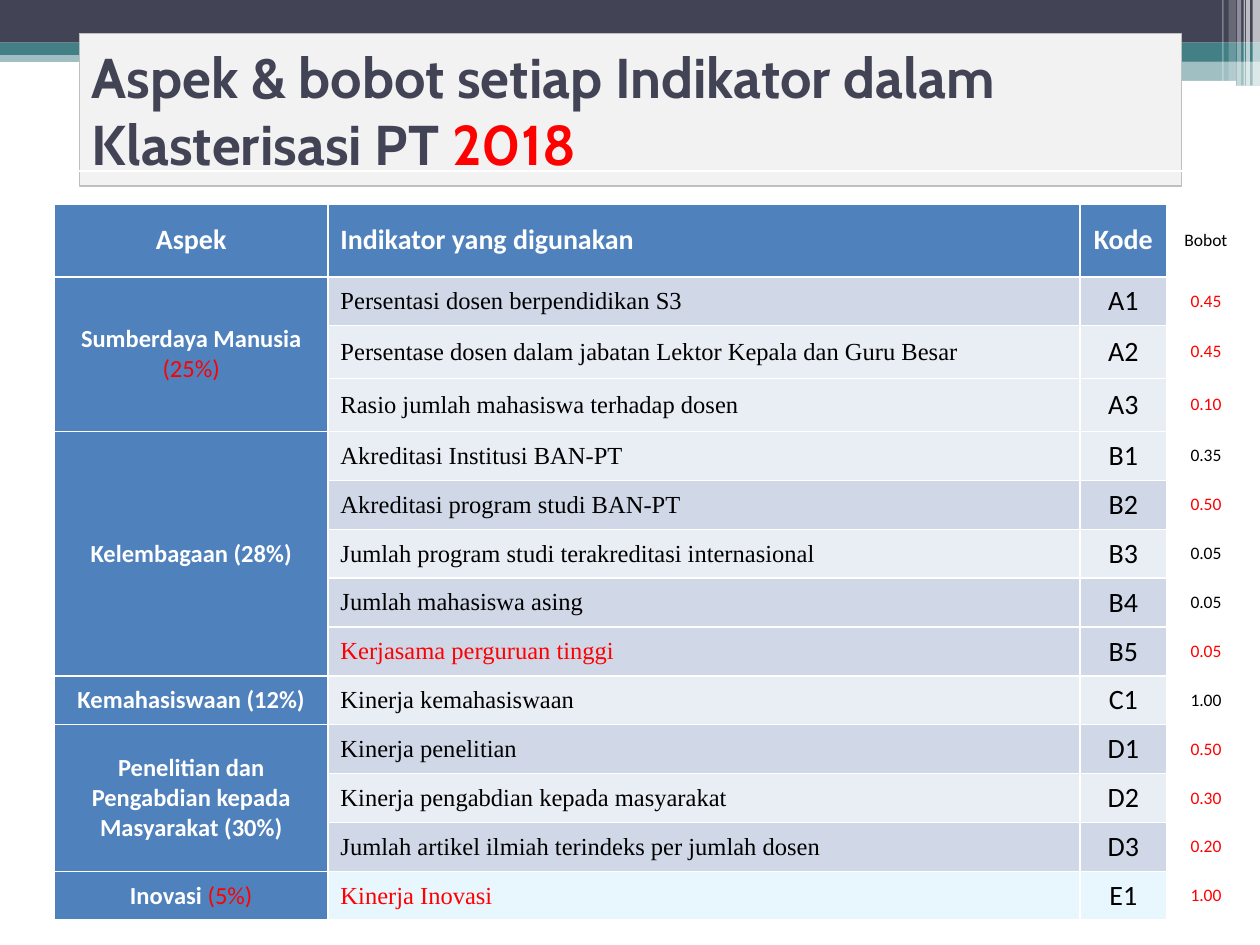
from lxml import etree
from pptx import Presentation
from pptx.dml.color import RGBColor
from pptx.enum.shapes import MSO_SHAPE
from pptx.enum.text import MSO_ANCHOR, PP_ALIGN
from pptx.oxml.ns import qn
from pptx.util import Cm, Pt

WHITE = RGBColor(0xFF, 0xFF, 0xFF)
BLACK = RGBColor(0, 0, 0)
RED = RGBColor(0xFF, 0, 0)
NAVY = RGBColor(0x42, 0x44, 0x56)
TEAL = RGBColor(0x43, 0x80, 0x86)
TITLE_FILL = RGBColor(0xF2, 0xF2, 0xF2)
TITLE_LINE = RGBColor(0xBF, 0xBF, 0xBF)
BLUE = RGBColor(0x4F, 0x81, 0xBD)
DARK_BAND = RGBColor(0xD0, 0xD8, 0xE8)
LIGHT_BAND = RGBColor(0xE9, 0xED, 0xF4)
PALE_BLUE = RGBColor(0xE8, 0xF6, 0xFE)


def add_runs(paragraph, runs, font_name, size):
    """Append runs given as (text, colour, bold)."""
    for text, color, bold in runs:
        span = paragraph.add_run()
        span.text = text
        span.font.name = font_name
        span.font.size = Pt(size)
        span.font.bold = bold
        span.font.color.rgb = color


def fill_cell(cell, runs, font_name, size, fill=None, align=PP_ALIGN.CENTER, bottom=1):
    """Write a cell with white borders; bottom is the lower border in points."""
    cell.vertical_anchor = MSO_ANCHOR.MIDDLE
    paragraph = cell.text_frame.paragraphs[0]
    paragraph.alignment = align
    add_runs(paragraph, runs, font_name, size)
    if fill is None:
        cell.fill.background()
    else:
        cell.fill.solid()
        cell.fill.fore_color.rgb = fill
    properties = cell._tc.get_or_add_tcPr()
    for index, side in enumerate(("lnL", "lnR", "lnT", "lnB")):
        width = bottom if side == "lnB" else 1
        border = etree.Element(qn("a:" + side), w=str(int(Pt(width))))
        solid = etree.SubElement(border, qn("a:solidFill"))
        etree.SubElement(solid, qn("a:srgbClr"), val=str(WHITE))
        properties.insert(index, border)


deck = Presentation()
deck.slide_width, deck.slide_height = Cm(25.4), Cm(19.05)
page = deck.slides.add_slide(deck.slide_layouts[6])

# Header decoration: left, top, width, height, colour, opacity in percent
bands = [
    (0, 1.02, 25.4, 0.23, TEAL, 50),
    (0, 0, 25.4, 0.86, NAVY, 100),
    (0, 0.86, 25.4, 0.25, TEAL, 100),
    (15.04, 0.99, 10.36, 0.25, TEAL, 100),
    (15.04, 1.22, 10.36, 0.51, TEAL, 50),
    (20.47, 1.63, 4.45, 0.1, WHITE, 100),
    (25.25, 0, 0.15, 1.73, WHITE, 65),
    (25.12, 0, 0.08, 1.73, WHITE, 65),
    (25.07, 0, 0.03, 1.73, WHITE, 60),
    (24.94, 0, 0.08, 1.73, WHITE, 40),
    (24.77, 0, 0.15, 1.63, WHITE, 20),
    (24.64, 0, 0.03, 1.63, WHITE, 30),
]
for left, top, width, height, color, opacity in bands:
    rounded = top == 1.63
    kind = MSO_SHAPE.ROUNDED_RECTANGLE if rounded else MSO_SHAPE.RECTANGLE
    band = page.shapes.add_shape(kind, Cm(left), Cm(top), Cm(width), Cm(height))
    band.shadow.inherit = False
    band.line.fill.background()
    band.fill.solid()
    band.fill.fore_color.rgb = color
    if opacity < 100:
        color_node = band._element.spPr.find(".//" + qn("a:srgbClr"))
        etree.SubElement(color_node, qn("a:alpha"), val=str(opacity * 1000))

# Title
title = page.shapes.add_textbox(Cm(1.6), Cm(0.68), Cm(22.22), Cm(3.07))
title.fill.solid()
title.fill.fore_color.rgb = TITLE_FILL
title.line.color.rgb = TITLE_LINE
title.line.width = Pt(0.75)
title.text_frame.word_wrap = True
title.text_frame.vertical_anchor = MSO_ANCHOR.MIDDLE
title_runs = [
    ("Aspek & bobot setiap Indikator dalam Klasterisasi PT ", NAVY, True),
    ("2018", RED, True),
]
add_runs(title.text_frame.paragraphs[0], title_runs, "Cabin", 32)

# Aspects with their indicators: text, text colour, code, weight, weight colour, fill
aspects = [
    ([("Sumberdaya Manusia ", WHITE, True), ("(25%)", RED, False)], [
        ("Persentasi dosen berpendidikan S3", BLACK, "A1", "0.45", RED, DARK_BAND),
        ("Persentase dosen dalam jabatan Lektor Kepala dan Guru Besar", BLACK,
         "A2", "0.45", RED, LIGHT_BAND),
        ("Rasio jumlah mahasiswa terhadap dosen", BLACK, "A3", "0.10", RED, LIGHT_BAND),
    ]),
    ([("Kelembagaan (28%)", WHITE, True)], [
        ("Akreditasi Institusi BAN-PT", BLACK, "B1", "0.35", BLACK, LIGHT_BAND),
        ("Akreditasi program studi BAN-PT", BLACK, "B2", "0.50", RED, DARK_BAND),
        ("Jumlah program studi terakreditasi internasional", BLACK,
         "B3", "0.05", BLACK, LIGHT_BAND),
        ("Jumlah mahasiswa asing", BLACK, "B4", "0.05", BLACK, DARK_BAND),
        ("Kerjasama perguruan tinggi", RED, "B5", "0.05", RED, DARK_BAND),
    ]),
    ([("Kemahasiswaan (12%)", WHITE, True)], [
        ("Kinerja kemahasiswaan", BLACK, "C1", "1.00", BLACK, LIGHT_BAND),
    ]),
    ([("Penelitian dan Pengabdian kepada Masyarakat (30%)", WHITE, True)], [
        ("Kinerja penelitian", BLACK, "D1", "0.50", RED, DARK_BAND),
        ("Kinerja pengabdian kepada masyarakat", BLACK, "D2", "0.30", RED, LIGHT_BAND),
        ("Jumlah artikel ilmiah terindeks per jumlah dosen", BLACK,
         "D3", "0.20", RED, DARK_BAND),
    ]),
    ([("Inovasi ", WHITE, True), ("(5%)", RED, False)], [
        ("Kinerja Inovasi", RED, "E1", "1.00", RED, PALE_BLUE),
    ]),
]

column_widths = [5.51, 15.16, 1.75, 1.58]
row_heights = [0.66, 1.47, 0.98, 1.07, 1.07] + [0.985] * 10
frame = page.shapes.add_table(len(row_heights), len(column_widths), Cm(1.1), Cm(3.45),
                              Cm(sum(column_widths)), Cm(sum(row_heights)))
table = frame.table
table.first_row = table.horz_banding = False
for column, width in zip(table.columns, column_widths):
    column.width = Cm(width)
for row, height in zip(table.rows, row_heights):
    row.height = Cm(height)

# The empty top row needs a small text size to keep its height
for cell in table.rows[0].cells:
    fill_cell(cell, [], "Calibri", 8)
    etree.SubElement(cell.text_frame.paragraphs[0]._p, qn("a:endParaRPr"), sz="800")
table.cell(0, 0).merge(table.cell(0, 3))

headings = [("Aspek", PP_ALIGN.CENTER), ("Indikator yang digunakan", PP_ALIGN.JUSTIFY),
            ("Kode", PP_ALIGN.CENTER)]
for index, (heading, align) in enumerate(headings):
    fill_cell(table.cell(1, index), [(heading, WHITE, True)], "Calibri", 16, BLUE, align, 1.5)
fill_cell(table.cell(1, 3), [("Bobot", BLACK, False)], "Calibri", 10)

row_index = 2
for aspect_runs, indicators in aspects:
    aspect_cell = table.cell(row_index, 0)
    fill_cell(aspect_cell, aspect_runs, "Calibri", 14, BLUE)
    if len(indicators) > 1:
        aspect_cell.merge(table.cell(row_index + len(indicators) - 1, 0))
    for indicator, color, code, weight, weight_color, fill in indicators:
        fill_cell(table.cell(row_index, 1), [(indicator, color, False)],
                  "Times New Roman", 14, fill, PP_ALIGN.JUSTIFY)
        fill_cell(table.cell(row_index, 2), [(code, BLACK, False)], "Calibri", 16, fill)
        fill_cell(table.cell(row_index, 3), [(weight, weight_color, False)], "Calibri", 10)
        row_index += 1

deck.save("out.pptx")
